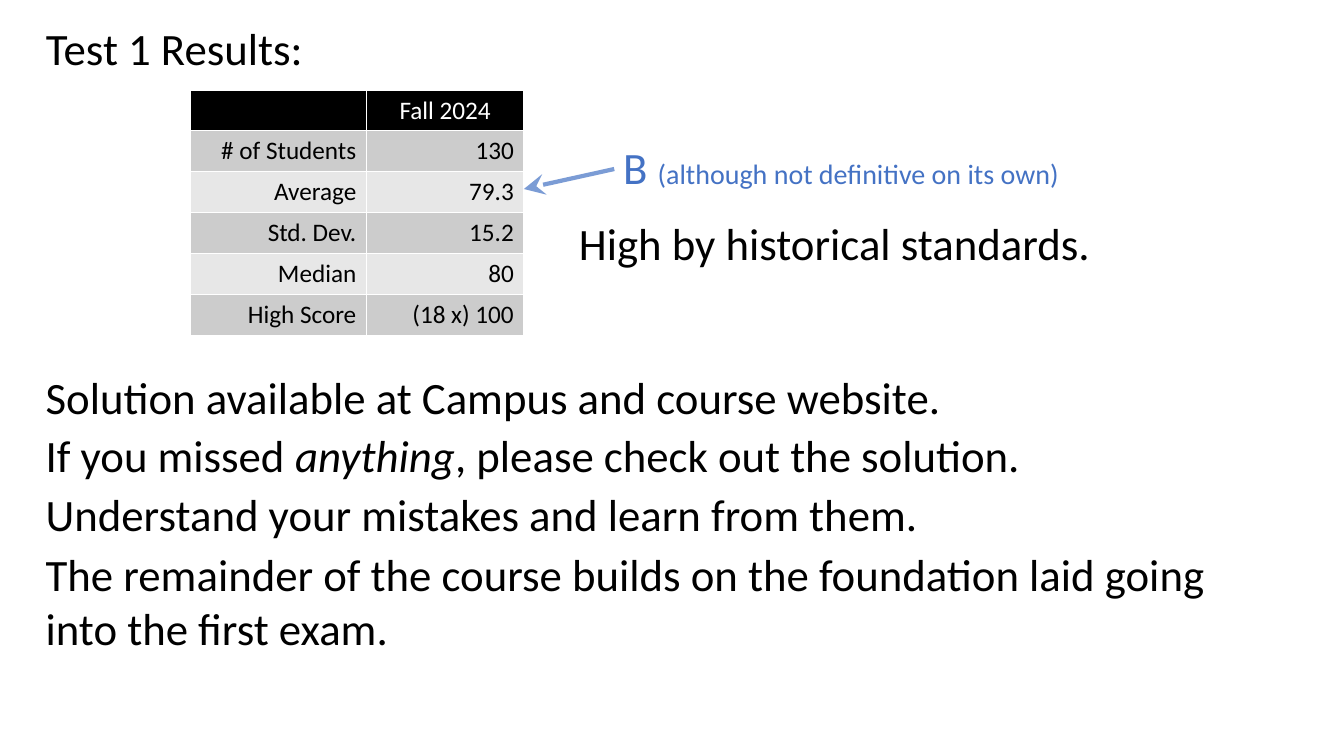
from dataclasses import dataclass

from lxml.etree import SubElement
from pptx import Presentation
from pptx.dml.color import RGBColor
from pptx.enum.shapes import MSO_CONNECTOR
from pptx.enum.text import MSO_ANCHOR, MSO_AUTO_SIZE, PP_ALIGN
from pptx.oxml.ns import qn
from pptx.util import Emu, Pt

PX = 9525
FONT = "Calibri"
BODY_SIZE = 32
NOTE_SIZE = 20
TABLE_SIZE = 18

BLACK = RGBColor(0x00, 0x00, 0x00)
WHITE = RGBColor(0xFF, 0xFF, 0xFF)
BLUE = RGBColor(0x44, 0x72, 0xC4)
DARK_BAND = RGBColor(0xCC, 0xCC, 0xCC)
LIGHT_BAND = RGBColor(0xE7, 0xE7, 0xE7)


@dataclass(frozen=True)
class Span:
    text: str
    size: int | None = None
    italic: bool | None = None
    new_line: bool = False


@dataclass(frozen=True)
class Note:
    left: int
    top: int
    width: int
    spans: tuple[Span, ...]
    height: int = 61
    color: RGBColor = BLACK


TITLE = Note(34, 15, 267, (Span("Test 1 Results:"),))
NOTES = (
    Note(34, 347, 890, (Span("Solution available at Campus and course website."),)),
    Note(34, 403, 960, (
        Span("If you missed "),
        Span("anything", italic=True),
        Span(", please check out the solution."),
    )),
    Note(34, 459, 862, (Span("Understand your mistakes and learn from them."),)),
    Note(34, 516, 1138, (
        Span("The remainder of the course builds on the foundation laid going"),
        Span("into the first exam.", new_line=True),
    ), height=113),
    Note(542, 201, 514, (Span("High by historical standards."),)),
    Note(584, 128, 441, (
        Span("B "),
        Span("(although not definitive on its own)", size=NOTE_SIZE),
    ), color=BLUE),
)

RESULTS = (
    ("", "Fall 2024"),
    ("# of Students", "130"),
    ("Average", "79.3"),
    ("Std. Dev.", "15.2"),
    ("Median", "80"),
    ("High Score", "(18 x) 100"),
)
COLUMN_WIDTHS = (168, 150)
HEADER_HEIGHT = 38
ROW_HEIGHT = 39
TABLE_LEFT, TABLE_TOP = 181, 86


def px(length: int) -> Emu:
    return Emu(length * PX)


def fill_note(box, note: Note) -> None:
    box.left, box.top = px(note.left), px(note.top)
    box.width, box.height = px(note.width), px(note.height)
    frame = box.text_frame
    frame.word_wrap = False
    frame.auto_size = MSO_AUTO_SIZE.SHAPE_TO_FIT_TEXT
    frame.vertical_anchor = MSO_ANCHOR.TOP
    para = frame.paragraphs[0]
    para.alignment = PP_ALIGN.LEFT
    para.font.name = FONT
    para.font.size = Pt(BODY_SIZE)
    para.font.color.rgb = note.color
    for span in note.spans:
        if span.new_line:
            para.add_line_break()
        run = para.add_run()
        run.text = span.text
        run.font.italic = span.italic
        if span.size:
            run.font.size = Pt(span.size)


def add_borders(cell) -> None:
    properties = cell._tc.get_or_add_tcPr()
    for side in "LRTB":
        border = SubElement(properties, qn(f"a:ln{side}"), w=str(Pt(1)))
        paint = SubElement(border, qn("a:solidFill"))
        SubElement(paint, qn("a:srgbClr"), val=str(WHITE))


def add_results(slide) -> None:
    heights = [HEADER_HEIGHT] + [ROW_HEIGHT] * (len(RESULTS) - 1)
    table = slide.shapes.add_table(
        len(RESULTS), len(COLUMN_WIDTHS), px(TABLE_LEFT), px(TABLE_TOP),
        px(sum(COLUMN_WIDTHS)), px(sum(heights)),
    ).table
    table.first_row = table.horz_banding = False
    for column, width in zip(table.columns, COLUMN_WIDTHS):
        column.width = px(width)
    for row, values in enumerate(RESULTS):
        table.rows[row].height = px(heights[row])
        header = row == 0
        band = BLACK if header else DARK_BAND if row % 2 else LIGHT_BAND
        for column, value in enumerate(values):
            cell = table.cell(row, column)
            add_borders(cell)
            cell.fill.solid()
            cell.fill.fore_color.rgb = band
            cell.text = value
            para = cell.text_frame.paragraphs[0]
            para.alignment = PP_ALIGN.CENTER if header else PP_ALIGN.RIGHT
            para.font.name = FONT
            para.font.size = Pt(TABLE_SIZE)
            para.font.color.rgb = WHITE if header else BLACK


def add_arrow(slide) -> None:
    arrow = slide.shapes.add_connector(
        MSO_CONNECTOR.STRAIGHT, px(585), px(161), px(499), px(180)
    )
    arrow.line.color.rgb = BLUE
    arrow.line.width = Pt(3)
    properties = arrow._element.spPr
    line = properties.find(qn("a:ln"))
    color = line.find(f".//{qn('a:srgbClr')}")
    SubElement(color, qn("a:alpha"), val="70000")
    SubElement(line, qn("a:round"))
    SubElement(line, qn("a:tailEnd"), type="stealth", w="lg", len="lg")
    SubElement(properties, qn("a:effectLst"))


def main() -> None:
    deck = Presentation()
    deck.slide_width, deck.slide_height = px(1280), px(720)
    page = deck.slides.add_slide(deck.slide_layouts[5])
    fill_note(page.shapes.title, TITLE)
    add_results(page)
    add_arrow(page)
    for note in NOTES:
        fill_note(page.shapes.add_textbox(0, 0, 0, 0), note)
    deck.save("out.pptx")


if __name__ == "__main__":
    main()
